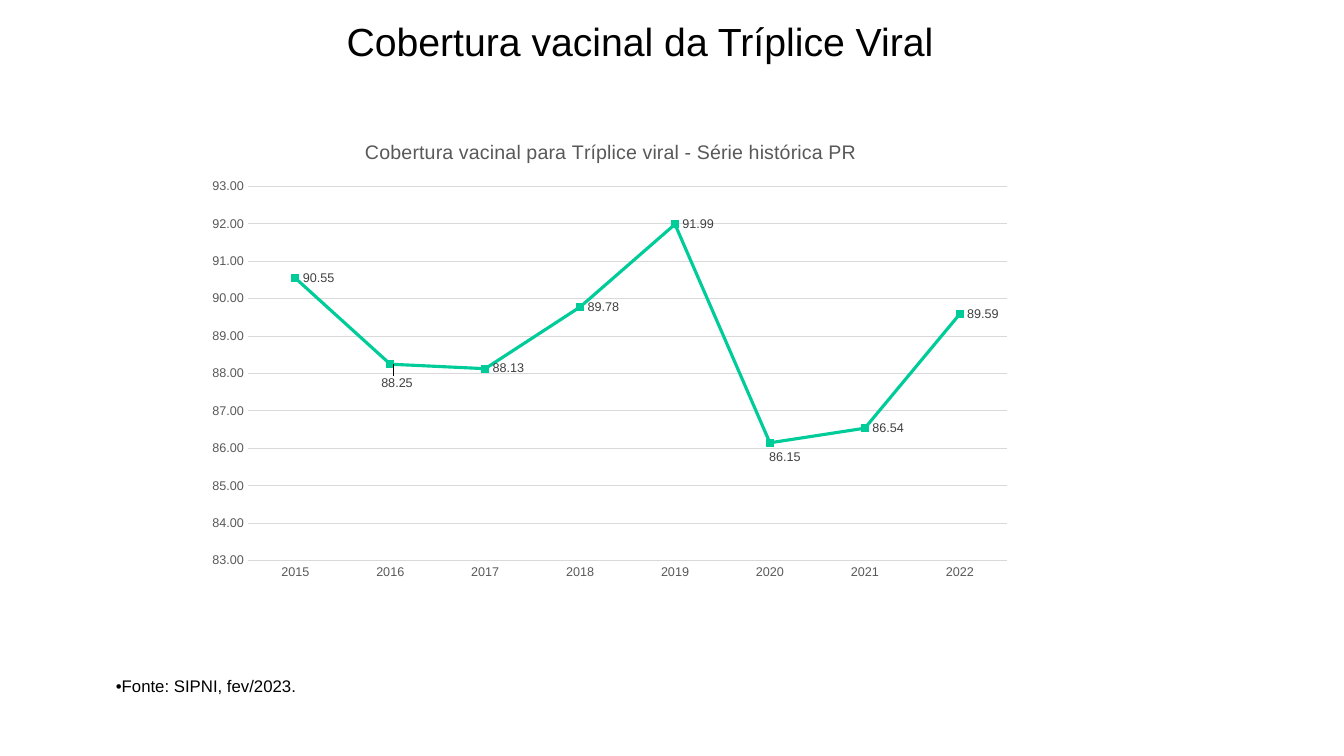
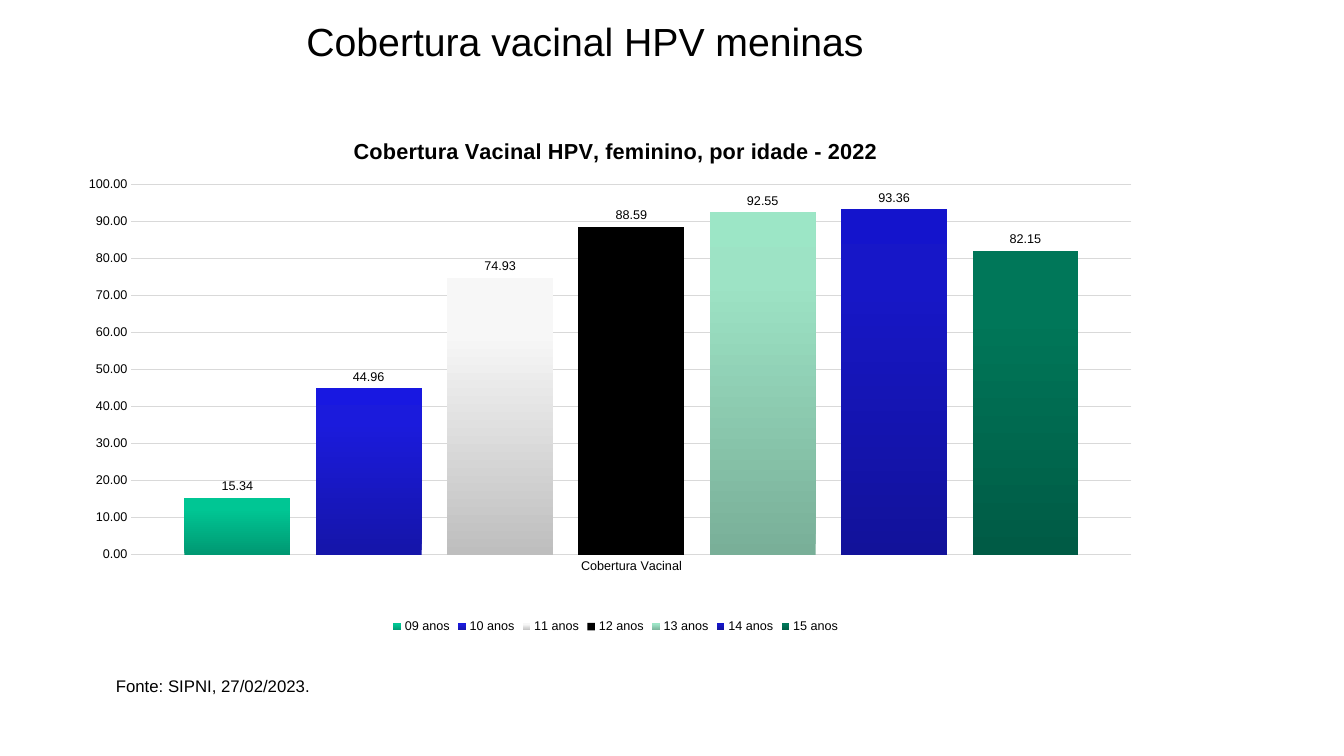
from copy import deepcopy

from lxml import etree
from pptx import Presentation
from pptx.chart.data import CategoryChartData
from pptx.dml.color import RGBColor
from pptx.enum.chart import XL_CHART_TYPE, XL_LABEL_POSITION, XL_LEGEND_POSITION, XL_TICK_MARK
from pptx.enum.text import MSO_ANCHOR, MSO_AUTO_SIZE, PP_ALIGN
from pptx.oxml.ns import qn
from pptx.util import Cm, Pt

LINE, BAR = XL_CHART_TYPE.LINE, XL_CHART_TYPE.COLUMN_CLUSTERED
RIGHT, ABOVE = XL_LABEL_POSITION.RIGHT, XL_LABEL_POSITION.OUTSIDE_END
BELOW = XL_LEGEND_POSITION.BOTTOM
NO_TICK = XL_TICK_MARK.NONE
TOP, BOTTOM = MSO_ANCHOR.TOP, MSO_ANCHOR.BOTTOM
CENTER, JUSTIFY = PP_ALIGN.CENTER, PP_ALIGN.JUSTIFY
NO_FIT = MSO_AUTO_SIZE.NONE

FONT = "Arial"
BLACK, GRAY, DARK, RULE, GREEN = "000000", "595959", "404040", "D9D9D9", "00CC99"
FORMAT = "0.00"


def color(code):
    return RGBColor.from_string(code)


def write(frame, text, size, ink=BLACK, bold=False, align=CENTER, space=None, bullet=None):
    par = frame.paragraphs[0]
    props = par._p.get_or_add_pPr()
    if bullet is not None:
        props.set("marL", "0")
        props.set("indent", "0")
        mark = etree.SubElement(props, qn("a:buChar" if bullet else "a:buNone"))
        if bullet:
            mark.set("char", bullet)
    par.alignment = align
    if space:
        par.line_spacing = space
        par.space_before = Pt(0)
    run = par.add_run()
    run.text = text
    run.font.name, run.font.size, run.font.bold = FONT, Pt(size), bold
    run.font.color.rgb = color(ink)


# Content of the two slides
years = [str(year) for year in range(2015, 2023)]
rates = [90.55, 88.25, 88.13, 89.78, 91.99, 86.15, 86.54, 89.59]
ages = [
    ("09 anos", 15.34, ["009872", "00C694", "00C795"]),
    ("10 anos", 44.96, ["1515A9", "1B1BDC", "1818E1"]),
    ("11 anos", 74.93, ["BEBEBE", "F7F7F7", "F8F8F8"]),
    ("12 anos", 88.59, [BLACK]),
    ("13 anos", 92.55, ["79AF98", "9DE3C5", "9CE6C6"]),
    ("14 anos", 93.36, ["12129A", "1717C8", "1414CC"]),
    ("15 anos", 82.15, ["005B45", "007759", "007759"]),
]
pages = [
    dict(title="Cobertura vacinal da Tríplice Viral", width=32.41,
         source="Fonte: SIPNI, fev/2023.", bullet="•",
         kind=LINE, box=(5, 3.05, 20.8, 11.79), plot=(0.06, 0.14, 0.92, 0.8),
         head=dict(text="Cobertura vacinal para Tríplice viral - Série histórica PR",
                   size=14, ink=GRAY),
         cats=years, series=[("Series 1", rates)],
         scale=(83, 93, 1), ink=GRAY, label=DARK, place=RIGHT),
    dict(title="Cobertura vacinal HPV meninas", width=29.64,
         source="Fonte: SIPNI, 27/02/2023.", bullet="",
         kind=BAR, box=(2.24, 2.95, 26.54, 13.13), plot=(0.04, 0.13, 0.95, 0.71),
         head=dict(text="Cobertura Vacinal HPV, feminino, por idade - 2022",
                   size=15.5, bold=True),
         cats=["Cobertura Vacinal"], series=[(name, [rate]) for name, rate, _ in ages],
         scale=(0, 100, 10), ink=BLACK, label=BLACK, place=ABOVE),
]

deck = Presentation()
deck.slide_width, deck.slide_height = Cm(33.87), Cm(19.05)

for page in pages:
    slide = deck.slides.add_slide(deck.slide_layouts[1])

    # Title and source note
    title, note = slide.placeholders
    for shape, box, anchor in [
        (title, (-0.08, 0.58, page["width"], 1.32), TOP),
        (note, (2.92, 16.71, 10.59, 0.84), BOTTOM),
    ]:
        shape.left, shape.top, shape.width, shape.height = map(Cm, box)
        frame = shape.text_frame
        frame.margin_left = frame.margin_right = frame.margin_top = frame.margin_bottom = 0
        frame.vertical_anchor, frame.auto_size, frame.word_wrap = anchor, NO_FIT, True
    write(title.text_frame, page["title"], 28, space=0.9)
    write(note.text_frame, page["source"], 12, align=JUSTIFY, space=0.9, bullet=page["bullet"])

    # Chart and its heading
    data = CategoryChartData(number_format=FORMAT)
    data.categories = page["cats"]
    for name, vals in page["series"]:
        data.add_series(name, vals)
    chart = slide.shapes.add_chart(page["kind"], *map(Cm, page["box"]), data).chart
    chart.font.name, chart.font.size = FONT, Pt(10)
    chart.font.color.rgb = color(BLACK)
    chart.has_title = True
    chart.chart_title.include_in_layout = False
    write(chart.chart_title.text_frame, **page["head"])

    # Axes
    base, side = chart.category_axis, chart.value_axis
    side.minimum_scale, side.maximum_scale, side.major_unit = page["scale"]
    side.has_major_gridlines = True
    side.tick_labels.number_format = FORMAT
    side.tick_labels.number_format_is_linked = False
    side.format.line.fill.background()
    for line in (base.format.line, side.major_gridlines.format.line):
        line.color.rgb = color(RULE)
        line.width = Pt(0.75)
    for axis in (base, side):
        axis.major_tick_mark = axis.minor_tick_mark = NO_TICK

    # Data labels
    plot = chart.plots[0]
    plot.vary_by_categories = False
    plot.has_data_labels = True
    labels = plot.data_labels
    labels.show_value, labels.position = True, page["place"]
    labels.number_format, labels.number_format_is_linked = FORMAT, False
    fonts = [(base.tick_labels.font, page["ink"]), (side.tick_labels.font, page["ink"]),
             (labels.font, page["label"])]
    chart.has_legend = page["kind"] == BAR
    area = chart._chartSpace.find(".//" + qn("c:plotArea"))
    for old in area.findall(qn("c:layout")):
        area.remove(old)
    spots = [(area, 0, dict(zip("xywh", page["plot"])))]

    # Line or columns
    if page["kind"] == LINE:
        curve = plot.series[0]
        curve.smooth = False
        curve.marker.style = None
        curve.format.line.color.rgb = color(GREEN)
        curve.format.line.width = Pt(2.25)
        series_labels = curve.data_labels
        series_labels.show_value, series_labels.position = True, RIGHT
        series_labels.number_format, series_labels.number_format_is_linked = FORMAT, False
        fonts.append((series_labels.font, DARK))
        for index, x, y in [(1, -0.02, 0.04), (5, -0.01, 0.03)]:
            label = curve.points[index].data_label
            label.position = RIGHT
            fonts.append((label.font, DARK))
            tag = curve._element.findall(".//" + qn("c:dLbl"))[-1]
            spots.append((tag, 1, dict(x=x, y=y)))
    else:
        plot.gap_width, plot.overlap = 100, -24
        chart.legend.position, chart.legend.include_in_layout = BELOW, False
        fonts.append((chart.legend.font, BLACK))
        for bar, (_, _, tones) in zip(plot.series, ages):
            fill = bar.format.fill
            if len(tones) == 1:
                fill.solid()
                fill.fore_color.rgb = color(tones[0])
                continue
            fill.gradient()
            fill.gradient_angle = 90
            stops = bar._element.find(".//" + qn("a:gsLst"))
            stops.append(deepcopy(stops[-1]))
            for stop, tone, pos in zip(fill.gradient_stops, tones, (0, 0.8, 1)):
                stop.color.rgb = color(tone)
                stop.position = pos

    for font, ink in fonts:
        font.name, font.size = FONT, Pt(9)
        font.color.rgb = color(ink)

    # Fixed places of the plot area and the shifted labels
    for host, at, marks in spots:
        layout = etree.Element(qn("c:layout"))
        manual = etree.SubElement(layout, qn("c:manualLayout"))
        parts = dict(marks)
        if host is area:
            parts = dict(layoutTarget="inner", xMode="edge", yMode="edge", **marks)
        for name, value in parts.items():
            etree.SubElement(manual, qn("c:" + name)).set("val", str(value))
        host.insert(at, layout)

deck.save("out.pptx")
